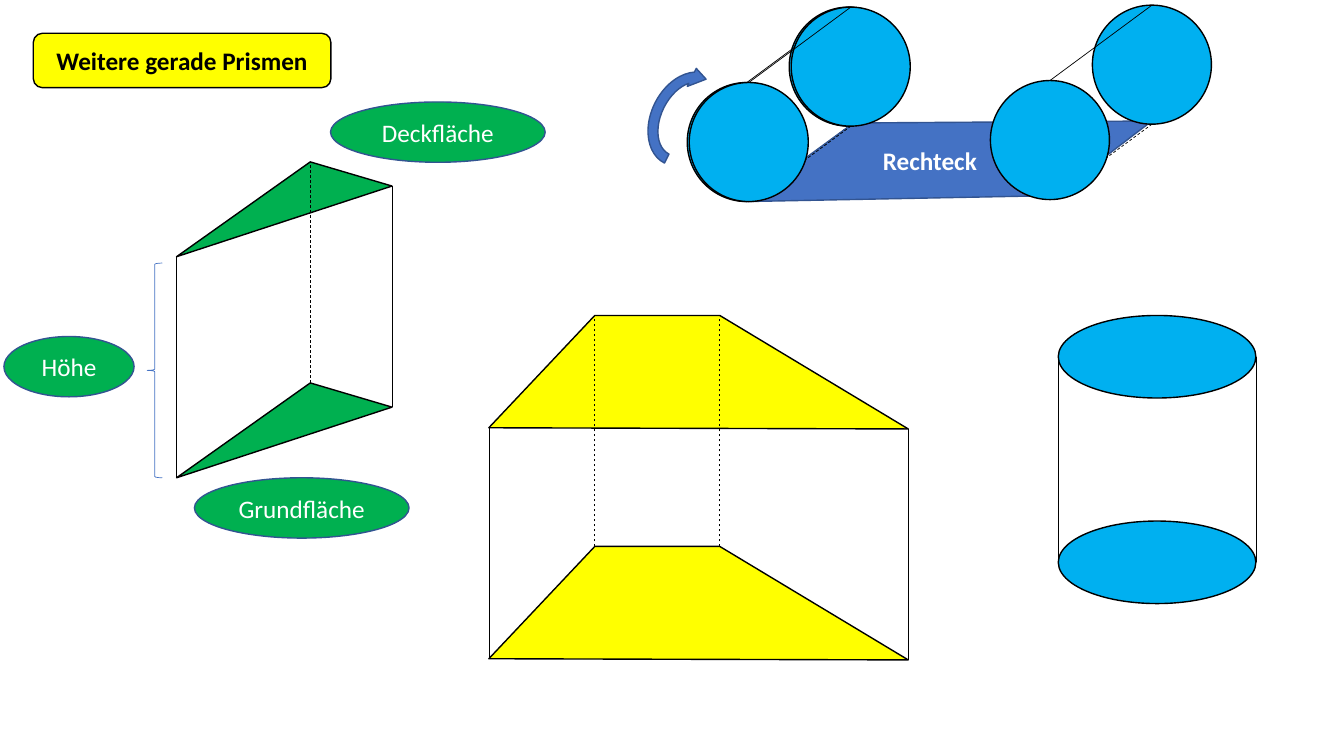
from dataclasses import dataclass
from typing import NamedTuple

from lxml.etree import SubElement
from pptx import Presentation
from pptx.dml.color import RGBColor
from pptx.enum.dml import MSO_LINE
from pptx.enum.shapes import MSO_CONNECTOR, MSO_SHAPE as Kind
from pptx.enum.text import MSO_ANCHOR, PP_ALIGN
from pptx.oxml.ns import qn
from pptx.util import Cm, Pt

BLACK, WHITE, YELLOW, GREEN = "000000", "FFFFFF", "FFFF00", "00B050"
SKY, BLUE, NAVY = "00B0F0", "4472C4", "325491"


class Point(NamedTuple):
    x: float
    y: float


class Box(NamedTuple):
    x: float
    y: float
    w: float
    h: float


@dataclass
class Prism:
    base: list[Point]
    rise: float
    fill: str
    hidden: set[int]


@dataclass
class Label:
    text: str
    box: Box


def color(code: str) -> RGBColor:
    return RGBColor.from_string(code)


def paint(shape, fill: str | None, line: str = BLACK, width: float = 1):
    shape.shadow.inherit = False
    if fill:
        shape.fill.solid()
        shape.fill.fore_color.rgb = color(fill)
    else:
        shape.fill.background()
    shape.line.color.rgb = color(line)
    shape.line.width = Pt(width)
    return shape


def draw(parent, kind: Kind, box: Box, fill: str | None, **style):
    return paint(parent.add_shape(kind, *map(Cm, box)), fill, **style)


def outline(parent, points: list[Point], fill: str, **style):
    """Draw a closed polygon."""
    first, *rest = [(Cm(p.x), Cm(p.y)) for p in points]
    pen = parent.build_freeform(*first, scale=1.0)
    pen.add_line_segments(rest, close=True)
    return paint(pen.convert_to_shape(), fill, **style)


def edge(parent, start: Point, end: Point, dash: bool = False) -> None:
    line = parent.add_connector(MSO_CONNECTOR.STRAIGHT, *map(Cm, (*start, *end)))
    line.line.color.rgb = color(BLACK)
    line.line.width = Pt(0.5)
    if dash:
        line.line.dash_style = MSO_LINE.DASH
    SubElement(line._element.spPr, qn("a:effectLst"))


def write(shape, text: str, *, ink: str = WHITE, bold: bool = False,
          align: PP_ALIGN = PP_ALIGN.CENTER,
          anchor: MSO_ANCHOR = MSO_ANCHOR.MIDDLE, wrap: bool = True) -> None:
    frame = shape.text_frame
    frame.word_wrap = wrap
    frame.vertical_anchor = anchor
    para = frame.paragraphs[0]
    para.alignment = align
    run = para.add_run()
    run.text = text
    font = run.font
    font.name, font.size, font.bold = "Calibri", Pt(18), bold
    font.color.rgb = color(ink)


def add_prism(shapes, prism: Prism) -> None:
    group = shapes.add_group_shape().shapes
    top = [Point(p.x, p.y - prism.rise) for p in prism.base]
    for face in (prism.base, top):
        outline(group, face, prism.fill)
    for i, (low, high) in enumerate(zip(prism.base, top)):
        edge(group, low, high, dash=i in prism.hidden)


def add_can(shapes, base: Box, rise: float) -> None:
    """Draw the upright cylinder."""
    group = shapes.add_group_shape().shapes
    for y in (base.y, base.y - rise):
        draw(group, Kind.OVAL, base._replace(y=y), SKY)
    mid = base.y + base.h / 2
    for x in (base.x, base.x + base.w):
        edge(group, Point(x, mid), Point(x, mid - rise))


def add_roll(shapes, back: Point) -> None:
    """Draw a lying cylinder, given the corner of its rear disc."""
    size, dx, dy = 3, -2.57, 1.9
    group = shapes.add_group_shape().shapes
    draw(group, Kind.OVAL, Box(*back, size, size), SKY)
    mid = back.x + size / 2
    for y, dash in ((back.y, False), (back.y + size, True)):
        edge(group, Point(mid, y), Point(mid + dx, y + dy), dash)
    draw(group, Kind.OVAL, Box(back.x + dx, back.y + dy, size, size), SKY)


PRISMS = [
    Prism([Point(4.45, 12.04), Point(7.82, 9.65), Point(9.88, 10.26)],
          5.57, GREEN, {1}),
    Prism([Point(12.32, 16.6), Point(14.99, 13.77), Point(18.14, 13.77),
           Point(22.89, 16.63)], 5.82, YELLOW, {1, 2}),
]
LABELS = [
    Label("Deckfläche", Box(8.33, 2.57, 5.41, 1.52)),
    Label("Grundfläche", Box(4.9, 12.04, 5.41, 1.52)),
    Label("Höhe", Box(0.1, 8.48, 3.28, 1.52)),
]
SHEET = [Point(18.8, 5.08), Point(21.51, 3.1), Point(29.03, 3.05),
         Point(26.57, 4.93)]


def main() -> None:
    deck = Presentation()
    deck.slide_width, deck.slide_height = Cm(33.87), Cm(19.05)
    shapes = deck.slides.add_slide(deck.slide_layouts[6]).shapes

    title = draw(shapes, Kind.ROUNDED_RECTANGLE, Box(0.84, 0.84, 7.5, 1.37), YELLOW)
    write(title, "Weitere gerade Prismen", ink=BLACK, bold=True)

    for prism in PRISMS:
        add_prism(shapes, prism)
    add_can(shapes, Box(26.67, 13.13, 4.98, 2.08), 5.18)
    for label in LABELS:
        oval = draw(shapes, Kind.OVAL, label.box, GREEN, line=NAVY)
        write(oval, label.text)
    draw(shapes, Kind.LEFT_BRACE, Box(3.71, 6.63, 0.38, 5.41), None,
         line=BLUE, width=0.5)

    add_roll(shapes, Point(19.89, 0.18))
    arrow = draw(shapes, Kind.CIRCULAR_ARROW, Box(15.93, 1.98, 2.74, 2.03),
                 BLUE, line=NAVY)
    arrow.rotation = 296.4
    outline(shapes, SHEET, BLUE, line=NAVY)
    note = shapes.add_textbox(*map(Cm, Box(22, 3.53, 2.9, 1.02)))
    write(note, "Rechteck", bold=True, align=PP_ALIGN.LEFT,
          anchor=MSO_ANCHOR.TOP, wrap=False)
    for back in (Point(27.53, 0.13), Point(19.94, 0.18)):
        add_roll(shapes, back)

    deck.save("out.pptx")


if __name__ == "__main__":
    main()
